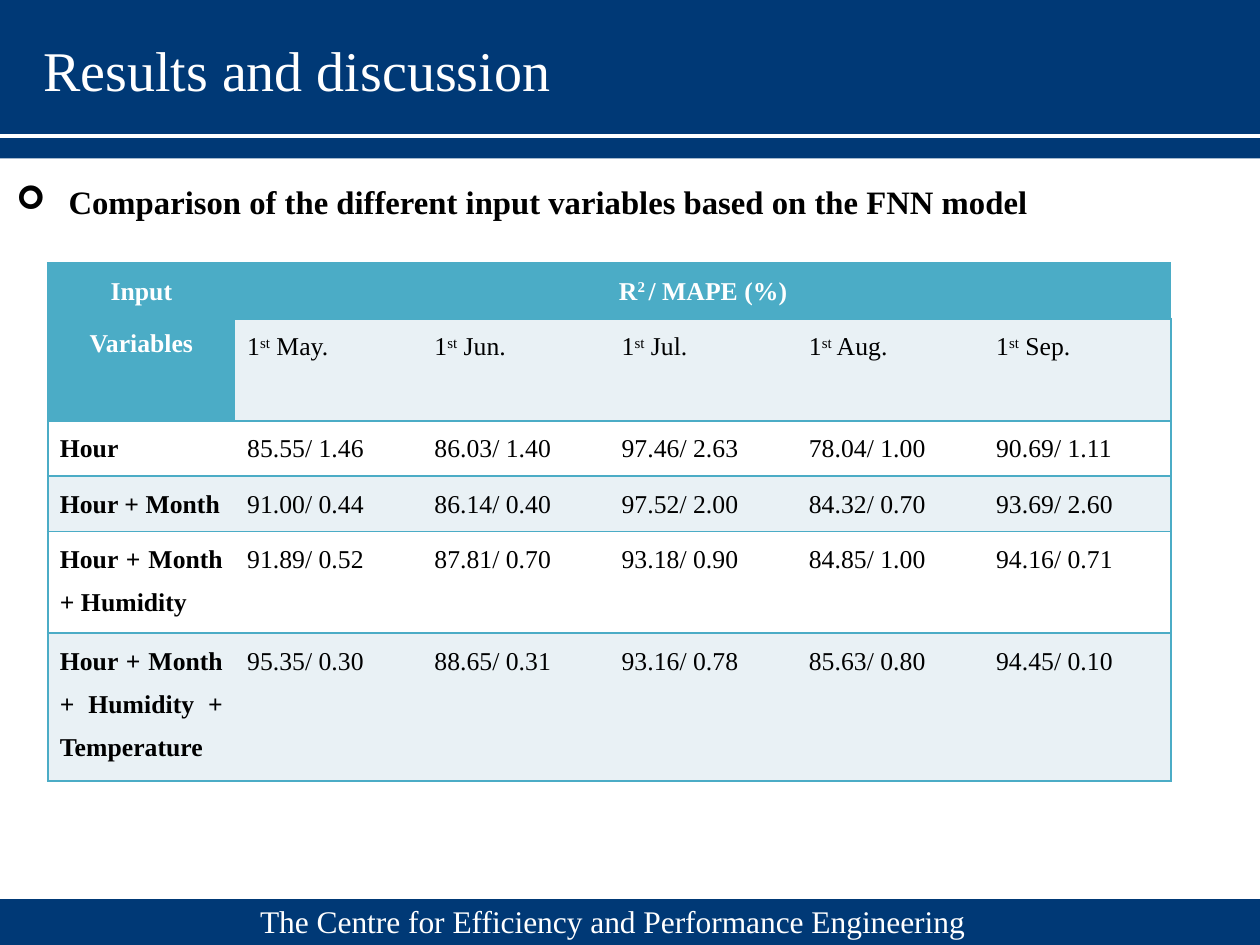
from dataclasses import dataclass

from lxml import etree
from pptx import Presentation
from pptx.dml.color import RGBColor
from pptx.enum.shapes import MSO_SHAPE
from pptx.enum.text import MSO_ANCHOR, MSO_AUTO_SIZE, PP_ALIGN
from pptx.oxml.ns import qn
from pptx.util import Pt

RECTANGLE = MSO_SHAPE.RECTANGLE
TOP = MSO_ANCHOR.TOP
GROW = MSO_AUTO_SIZE.SHAPE_TO_FIT_TEXT
LEFT, CENTER, JUSTIFY = PP_ALIGN.LEFT, PP_ALIGN.CENTER, PP_ALIGN.JUSTIFY
NO_STYLE = "{2D5ABB26-0587-4C30-8999-92F81FD0307C}"


@dataclass(frozen=True)
class Theme:
    font: str = "Times New Roman"
    navy: str = "003976"
    teal: str = "4BACC6"
    pale: str = "E9F1F5"
    white: str = "FFFFFF"
    black: str = "000000"
    title: float = 24
    heading: float = 14
    footer: float = 13.5
    cell: float = 11


theme = Theme()


def add_run(paragraph, text, size, color, bold=False, raised=False):
    run = paragraph.add_run()
    run.text = text
    run.font.name = theme.font
    run.font.size = Pt(size)
    run.font.bold = bold
    run.font.color.rgb = RGBColor.from_string(color)
    if raised:
        run.font._element.set("baseline", "30000")


def add_line(left, top, width, height, align):
    box = slide.shapes.add_textbox(Pt(left), Pt(top), Pt(width), Pt(height))
    box.text_frame.word_wrap = True
    box.text_frame.auto_size = GROW
    paragraph = box.text_frame.paragraphs[0]
    paragraph.alignment = align
    return paragraph


prs = Presentation()
prs.slide_width, prs.slide_height = Pt(540), Pt(405)
slide = prs.slides.add_slide(prs.slide_layouts[6])

for band_top, band_height in [(0, 57.5), (59.2, 8.8), (385.3, 19.7)]:
    band = slide.shapes.add_shape(RECTANGLE, 0, Pt(band_top), Pt(540), Pt(band_height))
    band.shadow.inherit = False
    band.fill.solid()
    band.fill.fore_color.rgb = RGBColor.from_string(theme.navy)
    band.line.fill.background()

footer = add_line(75, 383.2, 375, 23.8, CENTER)
add_run(footer, "The Centre for Efficiency and Performance Engineering", theme.footer, theme.white)

title = add_line(11.5, 11.5, 258.5, 36, LEFT)
add_run(title, "Results and discussion", theme.title, theme.white)

days = ["May.", "Jun.", "Jul.", "Aug.", "Sep."]
results = [
    ("Hour", "85.55/ 1.46", "86.03/ 1.40", "97.46/ 2.63", "78.04/ 1.00", "90.69/ 1.11"),
    ("Hour + Month", "91.00/ 0.44", "86.14/ 0.40", "97.52/ 2.00", "84.32/ 0.70", "93.69/ 2.60"),
    ("Hour + Month + Humidity",
     "91.89/ 0.52", "87.81/ 0.70", "93.18/ 0.90", "84.85/ 1.00", "94.16/ 0.71"),
    ("Hour + Month + Humidity + Temperature",
     "95.35/ 0.30", "88.65/ 0.31", "93.16/ 0.78", "85.63/ 0.80", "94.45/ 0.10"),
]
row_heights = [23.8, 43.5, 23.8, 23.8, 43.6, 63.4]
column_count = len(days) + 1
column_width = 80.25

frame = slide.shapes.add_table(len(row_heights), column_count, Pt(20.5), Pt(112.8),
                               Pt(column_width * column_count), Pt(sum(row_heights)))
scores = frame.table
scores.first_row = False
scores.horz_banding = False
scores._tbl.tblPr.find(qn("a:tableStyleId")).text = NO_STYLE
for column in scores.columns:
    column.width = Pt(column_width)
for row, height in zip(scores.rows, row_heights):
    row.height = Pt(height)

for r in range(len(row_heights)):
    for c in range(column_count):
        cell = scores.cell(r, c)
        cell.margin_left = cell.margin_right = Pt(5.2)
        cell.margin_top = cell.margin_bottom = 0
        cell.vertical_anchor = TOP
        edges = ["a:lnT", "a:lnB"]
        if c == column_count - 1:
            edges.insert(0, "a:lnR")
        if c == 0:
            edges.insert(0, "a:lnL")
        properties = cell._tc.get_or_add_tcPr()
        for edge in edges:
            border = etree.SubElement(properties, qn(edge), w=str(Pt(1)))
            ink = etree.SubElement(border, qn("a:solidFill"))
            etree.SubElement(ink, qn("a:srgbClr"), val=theme.teal)
        is_header = r == 0 or (r == 1 and c == 0)
        shade = theme.teal if is_header else theme.pale if r % 2 else theme.white
        cell.fill.solid()
        cell.fill.fore_color.rgb = RGBColor.from_string(shade)

scores.cell(0, 0).merge(scores.cell(1, 0))
scores.cell(0, 1).merge(scores.cell(0, column_count - 1))

entries = [
    (0, 0, CENTER, 4, theme.white, True, [[("Input", False)], [("Variables", False)]]),
    (0, 1, CENTER, 4, theme.white, True,
     [[("R", False), ("2 ", True), ("/ MAPE (%)", False)]]),
]
for c, day in enumerate(days, 1):
    entries.append((1, c, JUSTIFY, 8, theme.black, False,
                    [[("1", False), ("st", True), (f" {day}", False)]]))
for r, result in enumerate(results, 2):
    for c, value in enumerate(result):
        entries.append((r, c, JUSTIFY, 4, theme.black, c == 0, [[(value, False)]]))

for r, c, align, space_after, color, bold, lines in entries:
    text_frame = scores.cell(r, c).text_frame
    for i, line in enumerate(lines):
        paragraph = text_frame.add_paragraph() if i else text_frame.paragraphs[0]
        paragraph.alignment = align
        paragraph.line_spacing = 1.5
        paragraph.space_after = Pt(space_after)
        for text, raised in line:
            add_run(paragraph, text, theme.cell, color, bold, raised)

heading = add_line(0, 66.2, 474, 29.5, LEFT)
heading.line_spacing = 1.5
indent = heading._p.get_or_add_pPr()
indent.set("marL", str(Pt(22.3)))
indent.set("indent", str(-Pt(22.3)))
etree.SubElement(indent, qn("a:buFont"), typeface="Wingdings")
etree.SubElement(indent, qn("a:buChar"), char="➢")
add_run(heading, "Comparison of the different input variables based on the FNN model",
        theme.heading, theme.black, True)

prs.save("out.pptx")
